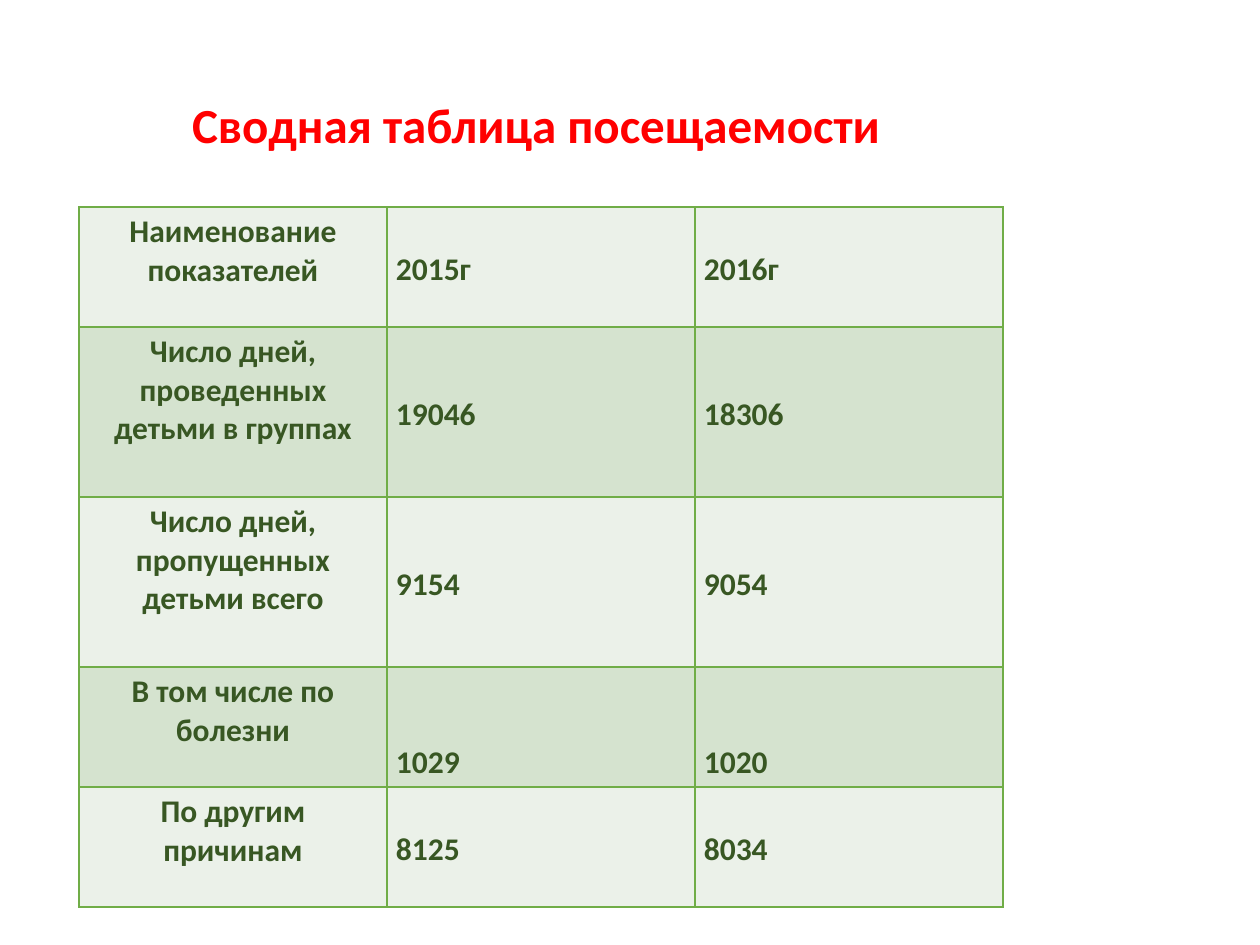
from dataclasses import dataclass

from lxml import etree
from pptx import Presentation
from pptx import util as u
from pptx.dml.color import RGBColor
from pptx.enum import text
from pptx.oxml import ns

PX = u.Inches(1) // 126
FONT = "Calibri"
COLORS = {"title": "FF0000", "text": "385723", "border": "70AD47",
          "light": "EBF1E9", "dark": "D5E3CF"}
COL_WIDTH = 308
LABEL_FORMAT = {"margin_left": 13 * PX, "margin_right": 13 * PX,
                "margin_top": 6 * PX, "margin_bottom": 6 * PX}
VALUE_FORMAT = {"margin_left": 9 * PX, "margin_right": 9 * PX,
                "margin_top": 0, "margin_bottom": 0,
                "vertical_anchor": text.MSO_ANCHOR.MIDDLE}
LOW_FORMAT = VALUE_FORMAT | {"margin_bottom": 5 * PX,
                             "vertical_anchor": text.MSO_ANCHOR.BOTTOM}


@dataclass
class Row:
    label: str
    values: tuple[str, str]
    height: int
    low: bool = False


ROWS = [
    Row("Наименование показателей", ("2015г", "2016г"), 120),
    Row("Число дней, проведенных детьми в группах", ("19046", "18306"), 170),
    Row("Число дней, пропущенных детьми всего", ("9154", "9054"), 170),
    Row("В том числе по болезни", ("1029", "1020"), 120, low=True),
    Row("По другим причинам", ("8125", "8034"), 120),
]


def apply_format(obj, values: dict) -> None:
    for name, value in values.items():
        setattr(obj, name, value)


def write(tf, words: str, size: int, color: str, **paragraph) -> None:
    p = tf.paragraphs[0]
    apply_format(p, paragraph)
    r = p.add_run()
    r.text = words
    apply_format(r.font, {"name": FONT, "size": u.Pt(size), "bold": True})
    r.font.color.rgb = RGBColor.from_string(COLORS[color])


def add_borders(cell) -> None:
    tc_pr = cell._tc.get_or_add_tcPr()
    for i, side in enumerate(("lnL", "lnR", "lnT", "lnB")):
        ln = etree.Element(ns.qn(f"a:{side}"), w=str(u.Pt(1)))
        fill = etree.SubElement(ln, ns.qn("a:solidFill"))
        etree.SubElement(fill, ns.qn("a:srgbClr"), val=COLORS["border"])
        tc_pr.insert(i, ln)


def style_cell(cell, fill: str, layout: dict) -> None:
    apply_format(cell, layout)
    cell.fill.solid()
    cell.fill.fore_color.rgb = RGBColor.from_string(COLORS[fill])
    add_borders(cell)


def add_attendance_table(s, left: int, top: int) -> None:
    height = sum(row.height for row in ROWS)
    table = s.shapes.add_table(len(ROWS), 3, left * PX, top * PX,
                               3 * COL_WIDTH * PX, height * PX).table
    apply_format(table, {"first_row": False, "horz_banding": False})
    for column in table.columns:
        column.width = COL_WIDTH * PX
    for i, row in enumerate(ROWS):
        table.rows[i].height = row.height * PX
        fill = "dark" if i % 2 else "light"
        label = table.cell(i, 0)
        style_cell(label, fill, LABEL_FORMAT)
        write(label.text_frame, row.label, 18, "text",
              alignment=text.PP_ALIGN.CENTER)
        for j, value in enumerate(row.values, start=1):
            cell = table.cell(i, j)
            style_cell(cell, fill, LOW_FORMAT if row.low else VALUE_FORMAT)
            write(cell.text_frame, value, 18, "text", line_spacing=1.15,
                  space_after=u.Pt(3))


def add_title(s, left: int, top: int, width: int, height: int) -> None:
    sp = s.shapes.add_textbox(left * PX, top * PX, width * PX, height * PX)
    tf = sp.text_frame
    apply_format(tf, {"word_wrap": True,
                      "auto_size": text.MSO_AUTO_SIZE.SHAPE_TO_FIT_TEXT})
    write(tf, "Сводная таблица посещаемости", 28, "title",
          alignment=text.PP_ALIGN.CENTER)


def main() -> None:
    prs = Presentation()
    apply_format(prs, {"slide_width": u.Inches(10),
                       "slide_height": u.Inches(7.5)})
    s = prs.slides.add_slide(prs.slide_layouts[6])

    # Attendance by year
    add_attendance_table(s, 79, 207)

    # Heading
    add_title(s, 88, 88, 896, 72)

    prs.save("out.pptx")


if __name__ == "__main__":
    main()
